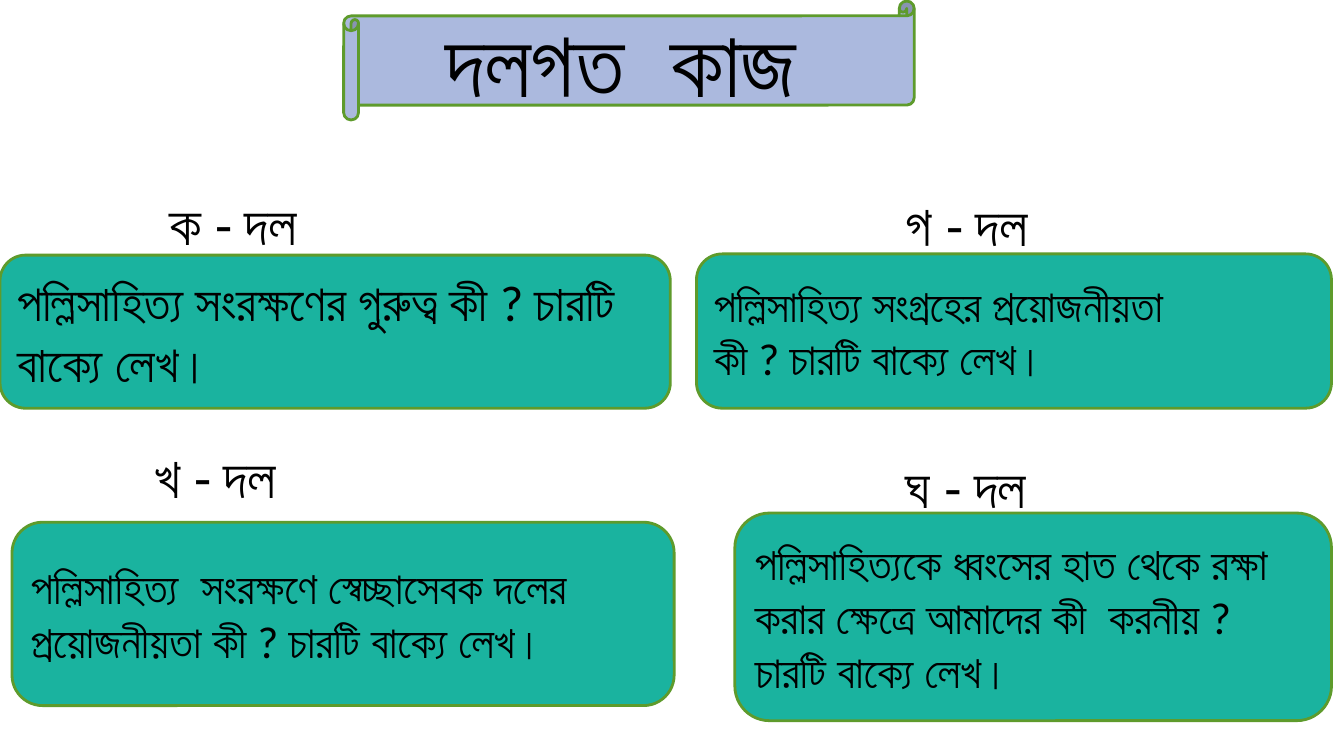
import pptx
import pptx.util
import pptx.dml.color
import pptx.enum.shapes
import pptx.enum.text
from dataclasses import dataclass

Pt = pptx.util.Pt
RGB = pptx.dml.color.RGBColor.from_string
Shapes = pptx.enum.shapes.MSO_SHAPE
Align = pptx.enum.text.PP_ALIGN
Anchor = pptx.enum.text.MSO_ANCHOR


@dataclass(frozen=True)
class Theme:
    font: str = "Calibri"
    ink: str = "000000"
    banner: str = "ABB9DE"
    card: str = "1AB39F"
    outline: str = "5E9B2C"
    outline_width: float = 2
    title_size: int = 66
    group_size: int = 40
    task_size: int = 32
    large_task_size: int = 36


theme = Theme()


def write(holder, lines, size, align=Align.LEFT):
    frame = holder.text_frame
    frame.word_wrap = True
    frame.text = "\n".join(lines)
    for paragraph in frame.paragraphs:
        paragraph.alignment = align
        for run in paragraph.runs:
            run.font.name = theme.font
            run.font.size = Pt(size)
            run.font.color.rgb = RGB(theme.ink)


def add_panel(kind, box, fill, lines, size, align=Align.LEFT):
    panel = slide.shapes.add_shape(kind, *map(Pt, box))
    panel.shadow.inherit = False
    panel.fill.solid()
    panel.fill.fore_color.rgb = RGB(fill)
    panel.line.color.rgb = RGB(theme.outline)
    panel.line.width = Pt(theme.outline_width)
    panel.text_frame.vertical_anchor = Anchor.MIDDLE
    write(panel, lines, size, align)


deck = pptx.Presentation()
deck.slide_width, deck.slide_height = Pt(960), Pt(540)
slide = deck.slides.add_slide(deck.slide_layouts[6])

# Title scroll
add_panel(Shapes.HORIZONTAL_SCROLL, (245.5, 0.7, 407.5, 85), theme.banner,
          ["দলগত  কাজ "], theme.title_size, Align.CENTER)

# Task cards: box, text size, lines
tasks = [
    ((524.9, 366.5, 426.2, 148.3), theme.task_size,
     ["পল্লিসাহিত্যকে ধ্বংসের হাত থেকে রক্ষা করার ক্ষেত্রে আমাদের কী  করনীয় ? চারটি বাক্যে লেখ।"]),
    ((0, 182.2, 478.8, 109.4), theme.large_task_size,
     ["পল্লিসাহিত্য সংরক্ষণের গুরুত্ব কী ? চারটি বাক্যে লেখ।"]),
    ((8.6, 373, 473, 131), theme.task_size,
     ["পল্লিসাহিত্য  সংরক্ষণে স্বেচ্ছাসেবক দলের প্রয়োজনীয়তা কী ? চারটি বাক্যে লেখ।"]),
    ((497.5, 181.4, 453.6, 110.2), theme.task_size,
     ["পল্লিসাহিত্য সংগ্রহের প্রয়োজনীয়তা", "কী ? চারটি বাক্যে লেখ।"]),
]
for box, size, lines in tasks:
    add_panel(Shapes.ROUNDED_RECTANGLE, box, theme.card, lines, size)

# Group names: left, top, width
groups = [
    ("খ - দল", 103, 312.5, 208),
    ("ঘ - দল", 640, 319.7, 208),
    ("গ - দল", 640, 132.5, 193),
    ("ক - দল", 113.8, 131.8, 185.8),
]
for name, left, top, width in groups:
    label = slide.shapes.add_textbox(Pt(left), Pt(top), Pt(width), Pt(55.4))
    label.text_frame.auto_size = pptx.enum.text.MSO_AUTO_SIZE.SHAPE_TO_FIT_TEXT
    write(label, [name], theme.group_size)

deck.save("out.pptx")
